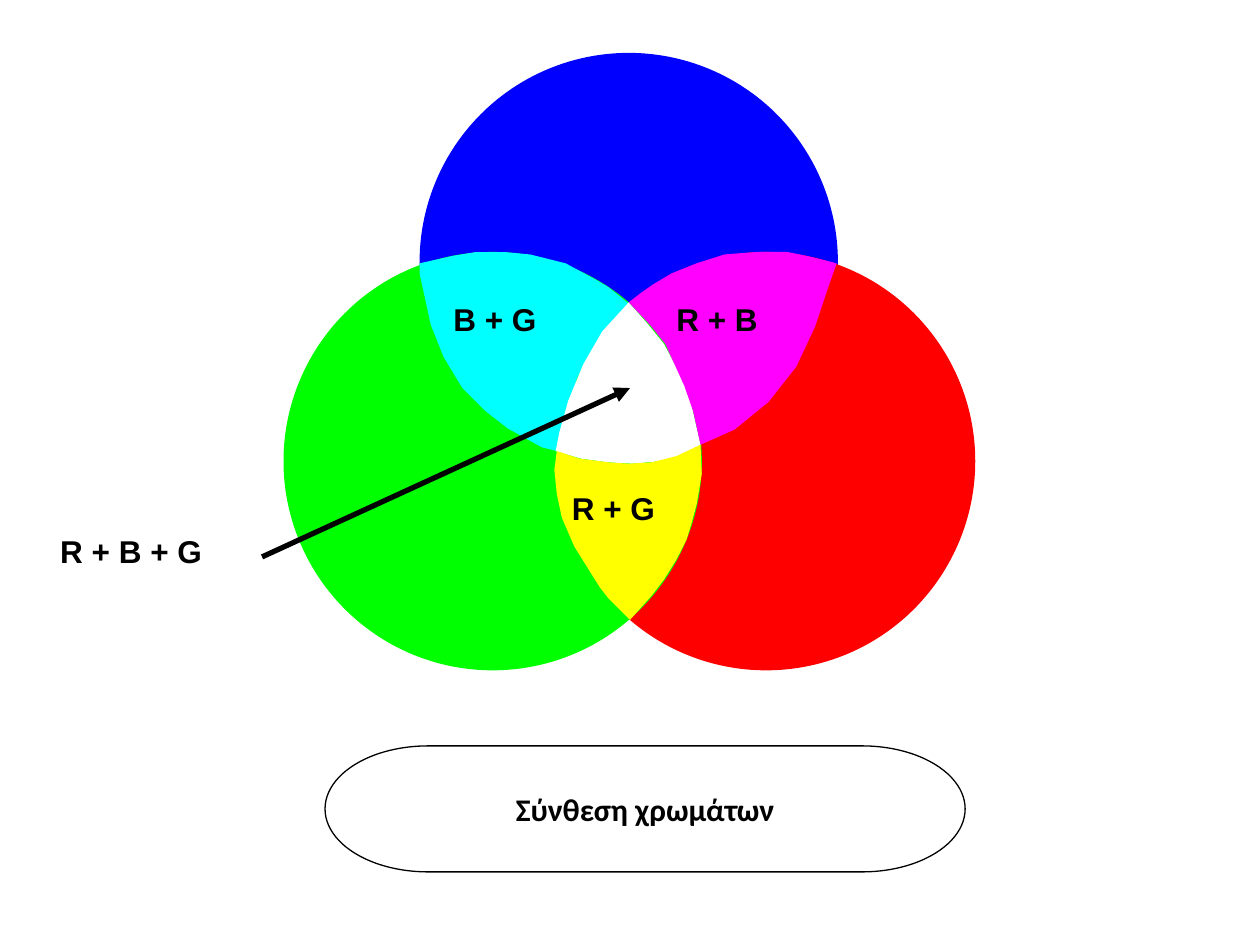
from typing import NamedTuple

from lxml.etree import SubElement
from pptx import Presentation
from pptx.dml.color import RGBColor
from pptx.enum.shapes import MSO_CONNECTOR as Connector, MSO_SHAPE as Shape
from pptx.enum.text import MSO_ANCHOR as Anchor, MSO_AUTO_SIZE as AutoSize, PP_ALIGN as Align
from pptx.oxml.ns import qn
from pptx.util import Inches, Pt

COLORS = {
    "blue": "0000FF", "red": "FF0000", "green": "00FF00",
    "cyan": "00FFFF", "magenta": "FF00FF", "yellow": "FFFF00",
    "white": "FFFFFF", "black": "000000",
}
DIAMETER = 3.32
HUNDREDTH = Inches(0.01)


class Light(NamedTuple):
    color: str
    left: float
    top: float


class Overlap(NamedTuple):
    color: str
    outline: list[tuple[int, int]]


class Label(NamedTuple):
    text: str
    left: float
    top: float
    width: float


LIGHTS = [Light("blue", 3.33, 0.42), Light("red", 4.42, 2), Light("green", 2.25, 2)]

OVERLAPS = [
    Overlap("cyan", [
        (333, 217), (337, 235), (342, 258), (352, 283), (367, 308), (385, 326),
        (403, 340), (430, 355), (442, 358), (458, 300), (480, 261), (499, 241),
        (483, 228), (473, 222), (449, 209), (421, 202), (400, 200), (378, 200),
        (360, 203), (333, 209)]),
    Overlap("white", [
        (499, 240), (478, 263), (463, 289), (451, 318), (444, 343), (441, 358),
        (461, 364), (483, 367), (502, 368), (525, 366), (541, 361), (556, 353),
        (546, 309), (527, 273), (514, 257)]),
    Overlap("magenta", [
        (664, 209), (644, 204), (625, 200), (601, 200), (575, 202), (553, 209),
        (533, 217), (518, 226), (508, 233), (499, 240), (516, 258), (528, 273),
        (543, 306), (550, 326), (556, 353), (583, 341), (610, 319), (632, 291),
        (647, 259), (657, 229)]),
    Overlap("yellow", [
        (442, 358), (440, 373), (442, 392), (446, 411), (456, 434), (476, 466),
        (483, 475), (500, 492), (517, 473), (527, 460), (537, 444), (545, 428),
        (549, 415), (553, 400), (557, 376), (556, 353), (537, 362), (517, 367),
        (499, 368), (483, 367), (460, 364)]),
]

LABELS = [
    Label("R + B", 5.27, 2.33, 1.06),
    Label("B + G", 3.5, 2.33, 1.08),
    Label("R + G", 4.44, 3.83, 1.08),
    Label("R + B + G", 0.38, 4.17, 1.7),
]


def rgb(color: str) -> RGBColor:
    return RGBColor.from_string(COLORS[color])


def paint(shape, color: str) -> None:
    shape.shadow.inherit = False
    shape.fill.solid()
    shape.fill.fore_color.rgb = rgb(color)
    shape.line.fill.background()


def write(shape, text: str, font_name: str) -> None:
    shape.text_frame.word_wrap = False
    paragraph = shape.text_frame.paragraphs[0]
    paragraph.text = text
    paragraph.font.name = font_name
    paragraph.font.size = Pt(18)
    paragraph.font.bold = True
    paragraph.font.color.rgb = rgb("black")


def draw_light(shapes, light: Light) -> None:
    circle = shapes.add_shape(Shape.OVAL, Inches(light.left), Inches(light.top),
                              Inches(DIAMETER), Inches(DIAMETER))
    paint(circle, light.color)


def draw_overlap(shapes, overlap: Overlap) -> None:
    start, *rest = overlap.outline
    builder = shapes.build_freeform(*start, scale=HUNDREDTH)
    builder.add_line_segments(rest, close=True)
    paint(builder.convert_to_shape(), overlap.color)


def draw_label(shapes, label: Label) -> None:
    box = shapes.add_textbox(Inches(label.left), Inches(label.top),
                             Inches(label.width), Inches(0.5))
    write(box, label.text, "Arial")
    box.text_frame.auto_size = AutoSize.SHAPE_TO_FIT_TEXT


def draw_arrow(shapes) -> None:
    arrow = shapes.add_connector(Connector.STRAIGHT, Inches(2.08), Inches(4.42),
                                 Inches(5), Inches(3.08))
    arrow.line.color.rgb = rgb("black")
    arrow.line.width = Pt(3)
    SubElement(arrow.line._get_or_add_ln(), qn("a:tailEnd"), type="triangle")
    SubElement(arrow._element.spPr, qn("a:effectLst"))


def draw_caption(shapes) -> None:
    caption = shapes.add_shape(Shape.FLOWCHART_TERMINATOR, Inches(2.58), Inches(5.92),
                               Inches(5.08), Inches(1))
    paint(caption, "white")
    caption.line.color.rgb = rgb("black")
    caption.line.width = Pt(0.75)
    write(caption, "Σύνθεση χρωμάτων", "Calibri")
    caption.text_frame.vertical_anchor = Anchor.MIDDLE
    caption.text_frame.paragraphs[0].alignment = Align.CENTER


def main() -> None:
    deck = Presentation()
    deck.slide_width, deck.slide_height = Inches(10), Inches(7.5)
    shapes = deck.slides.add_slide(deck.slide_layouts[6]).shapes
    for light in LIGHTS:
        draw_light(shapes, light)
    for overlap in OVERLAPS:
        draw_overlap(shapes, overlap)
    for label in LABELS:
        draw_label(shapes, label)
    draw_arrow(shapes)
    draw_caption(shapes)
    deck.save("out.pptx")


if __name__ == "__main__":
    main()
